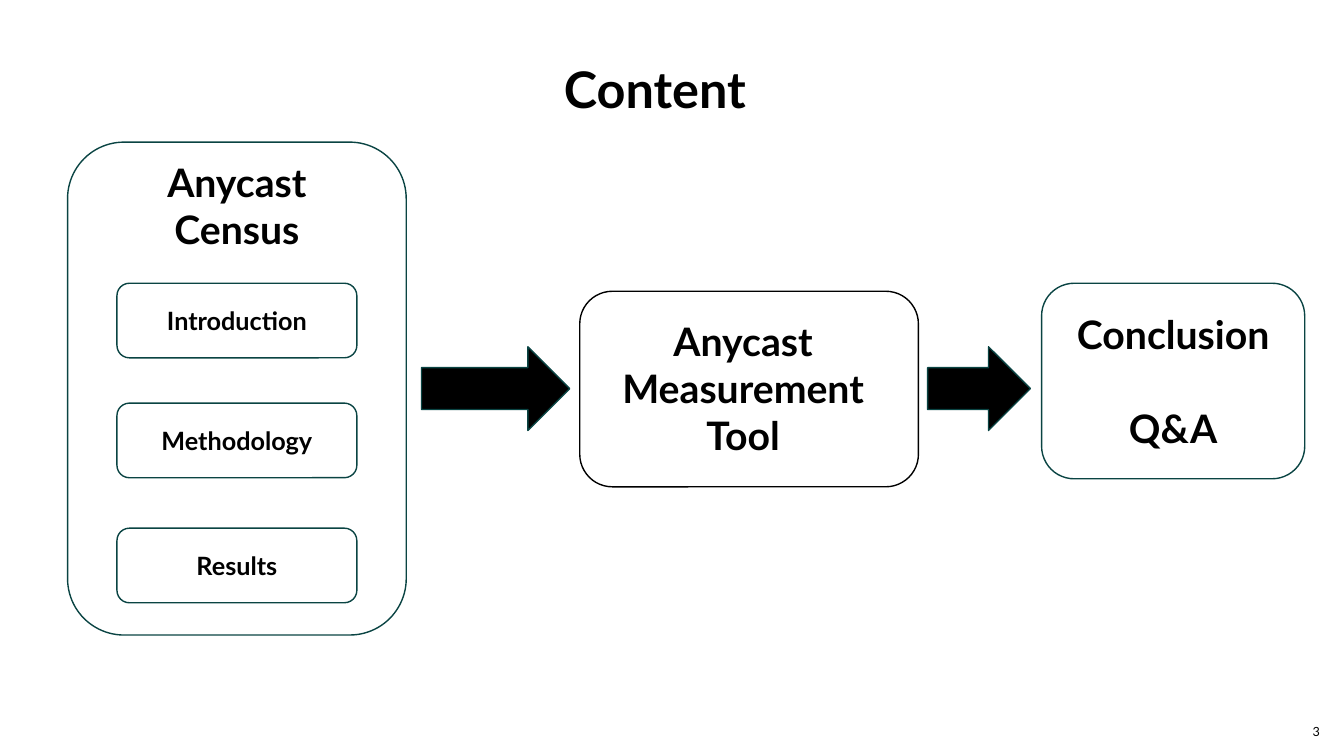
from pptx import Presentation
from pptx.dml.color import RGBColor
from pptx.enum.shapes import MSO_SHAPE
from pptx.enum.text import MSO_ANCHOR, PP_ALIGN
from pptx.util import Inches, Pt

ROUNDED, ARROW = MSO_SHAPE.ROUNDED_RECTANGLE, MSO_SHAPE.RIGHT_ARROW
TOP, MIDDLE = MSO_ANCHOR.TOP, MSO_ANCHOR.MIDDLE
CENTER, RIGHT = PP_ALIGN.CENTER, PP_ALIGN.RIGHT

WIDTH, HEIGHT = Inches(13.33), Inches(7.5)
FONT = "Lato"
BLACK, WHITE, TEAL = "000000", "FFFFFF", "0A4443"

# Shares of the slide's width and height, in percent
STAGE_W, STAGE_H = 25.2, 25.87
CENSUS_X, CENSUS_Y, CENSUS_H = 5.03, 18.8, 65.2
STEP_W, STEP_H = 17.85, 9.87
STEP_X = CENSUS_X + (STAGE_W - STEP_W) / 2
ARROW_Y, ARROW_H = 45.87, 11.07
STEPS = [("Introduction", 37.47), ("Methodology", 53.33), ("Results", 69.87)]
ARROWS = [(31.36, 11.03), (69.02, 7.65)]


def rgb(value):
    return RGBColor.from_string(value)


def place(x, y, w, h):
    """Turn percentages of the slide into left, top, width and height."""
    return [int(share * side / 100)
            for share, side in ((x, WIDTH), (y, HEIGHT), (w, WIDTH), (h, HEIGHT))]


def write(sp, lines, size, bold=True, align=CENTER, anchor=MIDDLE,
          spacing=None, gap=0):
    tf = sp.text_frame
    tf.word_wrap = True
    tf.vertical_anchor = anchor
    for i, line in enumerate(lines):
        p = tf.add_paragraph() if i else tf.paragraphs[0]
        p.text = line
        p.alignment = align
        if spacing:
            p.line_spacing = spacing
        if i and gap:
            p.space_before = Pt(gap)
        p.font.name = FONT
        p.font.size = Pt(size)
        p.font.bold = bold
        p.font.color.rgb = rgb(BLACK)


def add_text(s, box, lines, size, **style):
    sp = s.shapes.add_textbox(*place(*box))
    write(sp, lines, size, **style)


def add_box(s, kind, box, fill=None, line=TEAL):
    sp = s.shapes.add_shape(kind, *place(*box))
    sp.shadow.inherit = False
    if fill:
        sp.fill.solid()
        sp.fill.fore_color.rgb = rgb(fill)
    else:
        sp.fill.background()
    sp.line.color.rgb = rgb(line)
    sp.line.width = Pt(1)
    return sp


def main():
    prs = Presentation()
    prs.slide_width, prs.slide_height = WIDTH, HEIGHT
    s = prs.slides.add_slide(prs.slide_layouts[6])

    # Title and page number
    add_text(s, (5.03, 8, 87.4, 16.53), ["Content"], 36, anchor=TOP, spacing=0.9)
    add_text(s, (95.42, 94.13, 3.53, 5.33), ["3"], 9, bold=False, align=RIGHT)

    # Census stage with its steps
    add_box(s, ROUNDED, (CENSUS_X, CENSUS_Y, STAGE_W, CENSUS_H))
    add_text(s, (CENSUS_X, 20.27, STAGE_W, 13.87), ["Anycast", "Census"], 28,
             anchor=TOP)
    for label, y in STEPS:
        step = add_box(s, ROUNDED, (STEP_X, y, STEP_W, STEP_H), fill=WHITE)
        write(step, [label], 18)

    # Tool stage
    add_box(s, ROUNDED, (43.14, 38.53, STAGE_W, STAGE_H), line=BLACK)
    add_text(s, (42.69, 41.33, STAGE_W, 20.13),
             ["Anycast", "Measurement", "Tool"], 28, anchor=TOP)

    # Closing stage
    closing = add_box(s, ROUNDED, (77.5, 37.47, 19.58, STAGE_H))
    write(closing, ["Conclusion", "Q&A"], 28, gap=33.6)

    # Arrows between the stages
    for x, w in ARROWS:
        add_box(s, ARROW, (x, ARROW_Y, w, ARROW_H), fill=BLACK)

    prs.save("out.pptx")


if __name__ == "__main__":
    main()
